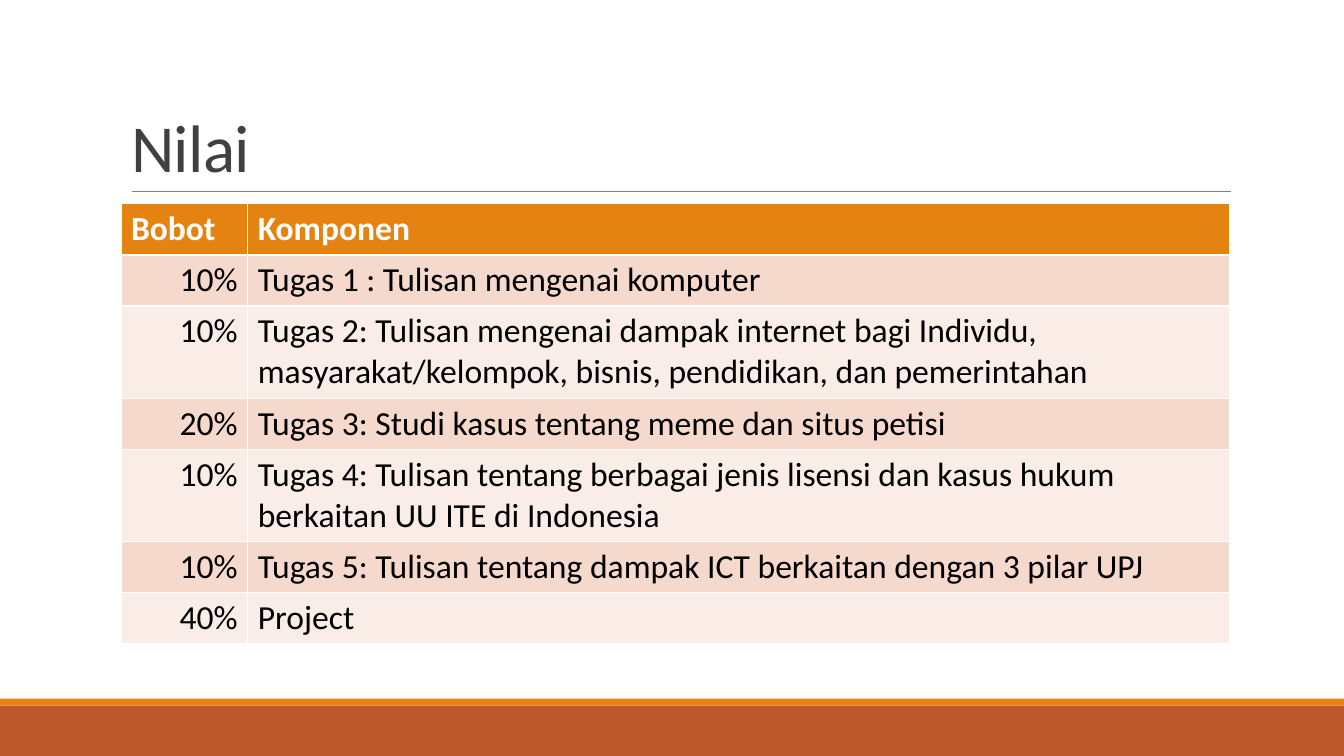
from pptx import Presentation
from pptx.dml.color import RGBColor
from pptx.enum import shapes, text
from pptx.oxml import ns
from pptx.util import Pt
from lxml import etree

WHITE = RGBColor(0xFF, 0xFF, 0xFF)
BLACK = RGBColor(0, 0, 0)
DARK = RGBColor(0x40, 0x40, 0x40)
GREY = RGBColor(0x80, 0x80, 0x80)
ORANGE = RGBColor(0xE4, 0x83, 0x12)
RUST = RGBColor(0xBD, 0x58, 0x2C)
PEACH = RGBColor(0xF5, 0xD9, 0xCC)
PALE = RGBColor(0xFA, 0xED, 0xE7)

ROWS = [
    ("Bobot", "Komponen"),
    ("10%", "Tugas 1 : Tulisan mengenai komputer"),
    ("10%", "Tugas 2: Tulisan mengenai dampak internet bagi Individu, "
            "masyarakat/kelompok, bisnis, pendidikan, dan pemerintahan"),
    ("20%", "Tugas 3: Studi kasus tentang meme dan situs petisi"),
    ("10%", "Tugas 4: Tulisan tentang berbagai jenis lisensi dan kasus hukum "
            "berkaitan UU ITE di Indonesia"),
    ("10%", "Tugas 5: Tulisan tentang dampak ICT berkaitan dengan 3 pilar UPJ"),
    ("40%", "Project"),
]


def style(run, size, color, bold=False):
    run.font.name = "Calibri"
    run.font.size = Pt(size)
    run.font.color.rgb = color
    run.font.bold = bold


prs = Presentation()
prs.slide_width, prs.slide_height = Pt(960), Pt(540)
slide = prs.slides.add_slide(prs.slide_layouts[5])

# Footer bands
for top, height, color in ((504, 36, RUST), (499, 5, ORANGE)):
    band = slide.shapes.add_shape(
        shapes.MSO_SHAPE.RECTANGLE, 0, Pt(top), prs.slide_width, Pt(height))
    band.shadow.inherit = False
    band.fill.solid()
    band.fill.fore_color.rgb = color
    band.line.fill.background()

# Title and its rule
rule = slide.shapes.add_connector(
    shapes.MSO_CONNECTOR.STRAIGHT, Pt(94.3), Pt(136.8), Pt(879), Pt(136.8))
rule.line.color.rgb = GREY
rule.line.width = Pt(0.5)
etree.SubElement(rule.line._get_or_add_ln().getparent(), ns.qn("a:effectLst"))

title = slide.shapes.title
title.left, title.top, title.width, title.height = Pt(86.4), Pt(22.5), Pt(792), Pt(114.3)
frame = title.text_frame
frame.text = "Nilai"
frame.auto_size = text.MSO_AUTO_SIZE.NONE
frame.vertical_anchor = text.MSO_ANCHOR.BOTTOM
head = frame.paragraphs[0]
head.alignment = text.PP_ALIGN.LEFT
head.line_spacing = 0.85
style(head.runs[0], 48, DARK)
head.runs[0].font._element.set("spc", "-50")

# Grade table; the default table style draws the white borders
table = slide.shapes.add_table(
    len(ROWS), 2, Pt(86.4), Pt(145.6), Pt(792), Pt(29.2 * len(ROWS))).table
table.columns[0].width, table.columns[1].width = Pt(90.6), Pt(701.4)
for r, row in enumerate(ROWS):
    for c, words in enumerate(row):
        cell = table.cell(r, c)
        cell.fill.solid()
        cell.fill.fore_color.rgb = ORANGE if r == 0 else (PALE, PEACH)[r % 2]
        cell.text_frame.text = words
        para = cell.text_frame.paragraphs[0]
        if r and c == 0:
            para.alignment = text.PP_ALIGN.RIGHT
        style(para.runs[0], 24, BLACK if r else WHITE, r == 0)

prs.save("out.pptx")
